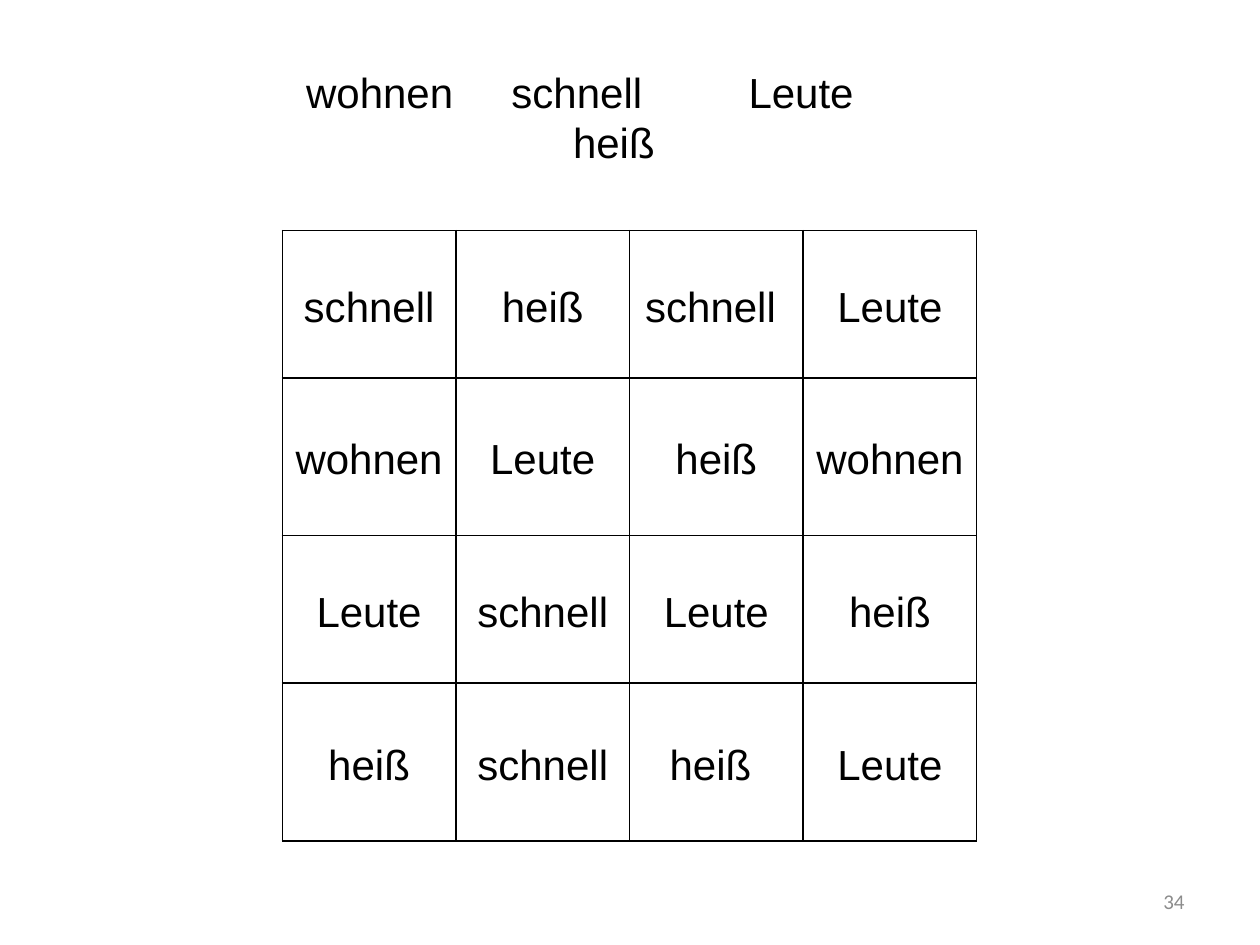
from lxml.etree import SubElement
from pptx import Presentation
from pptx.dml.color import RGBColor
from pptx.enum.text import MSO_ANCHOR as Anchor, PP_ALIGN as Align
from pptx.oxml.ns import qn
from pptx.util import Cm, Pt

WORD_ROWS = [
    ["schnell", "heiß", "schnell ", "Leute"],
    ["wohnen", "Leute", "heiß", "wohnen"],
    ["Leute", "schnell", "Leute", "heiß"],
    ["heiß", "schnell", "heiß ", "Leute"],
]


def color(hex_value):
    return RGBColor.from_string(hex_value)


def apply(target, values):
    for name, value in values.items():
        setattr(target, name, value)


class WordSlide:
    ink = "000000"
    word_font = {"name": "Arial", "size": Pt(24), "bold": False}
    number_font = {"name": "Calibri", "size": Pt(12)}
    cell_format = {
        "vertical_anchor": Anchor.MIDDLE,
        "margin_left": Cm(0.18), "margin_right": Cm(0.18),
        "margin_top": 0, "margin_bottom": 0,
    }

    def __init__(self, deck):
        self.slide = deck.slides.add_slide(deck.slide_layouts[5])

    def add_words(self, paragraph, words, font, ink, **layout):
        run = paragraph.add_run()
        run.text = words
        apply(run.font, font)
        run.font.color.rgb = color(ink)
        apply(paragraph, layout)

    def title(self, spread_words, last_word, tab_stops, box):
        heading = self.slide.shapes.title
        apply(heading, box)
        frame = heading.text_frame
        apply(frame, {"vertical_anchor": Anchor.MIDDLE, "word_wrap": True,
                      "margin_left": Cm(0.48), "margin_right": Cm(0.7)})
        spread = frame.paragraphs[0]
        self.add_words(spread, "\t".join(spread_words), self.word_font,
                       self.ink, alignment=Align.LEFT)
        tabs = SubElement(spread._p.get_or_add_pPr(), qn("a:tabLst"))
        for stop in tab_stops:
            SubElement(tabs, qn("a:tab"), pos=str(Cm(stop)), algn="l")
        self.add_words(frame.add_paragraph(), last_word, self.word_font,
                       self.ink, alignment=Align.CENTER)

    def border(self, cell):
        properties = cell._tc.get_or_add_tcPr()
        for side in ("lnL", "lnR", "lnT", "lnB"):
            line = SubElement(properties, qn(f"a:{side}"), w=str(Pt(1)))
            fill = SubElement(line, qn("a:solidFill"))
            SubElement(fill, qn("a:srgbClr"), val=self.ink)

    def word_grid(self, rows, left, top, column_width, row_heights):
        grid = self.slide.shapes.add_table(
            len(rows), len(rows[0]), Cm(left), Cm(top),
            Cm(column_width * len(rows[0])), Cm(sum(row_heights))).table
        apply(grid, {"first_row": False, "horz_banding": False})
        for column in grid.columns:
            column.width = Cm(column_width)
        for grid_row, height, words in zip(grid.rows, row_heights, rows):
            grid_row.height = Cm(height)
            for cell, word in zip(grid_row.cells, words):
                apply(cell, self.cell_format)
                self.border(cell)
                cell.fill.background()
                self.add_words(cell.text_frame.paragraphs[0], word,
                               self.word_font, self.ink,
                               alignment=Align.CENTER, line_spacing=1.15)

    def page_number(self, number, left, top, width, height):
        frame = self.slide.shapes.add_textbox(
            Cm(left), Cm(top), Cm(width), Cm(height)).text_frame
        apply(frame, {"word_wrap": True, "vertical_anchor": Anchor.MIDDLE})
        self.add_words(frame.paragraphs[0], number, self.number_font, "8C8C8C",
                       alignment=Align.RIGHT)


def main():
    deck = Presentation()
    apply(deck, {"slide_width": Cm(25.4), "slide_height": Cm(19.05)})
    words = WordSlide(deck)
    words.title(["wohnen", "schnell", "Leute"], "heiß", [4.14, 8.92],
                {"left": Cm(5.69), "top": Cm(0.76),
                 "width": Cm(13.59), "height": Cm(3.18)})
    words.word_grid(WORD_ROWS, 5.69, 4.65, 3.5, [2.97, 3.18] * 2)
    words.page_number("34", 18.21, 17.65, 5.92, 1.02)
    deck.save("out.pptx")


if __name__ == "__main__":
    main()
